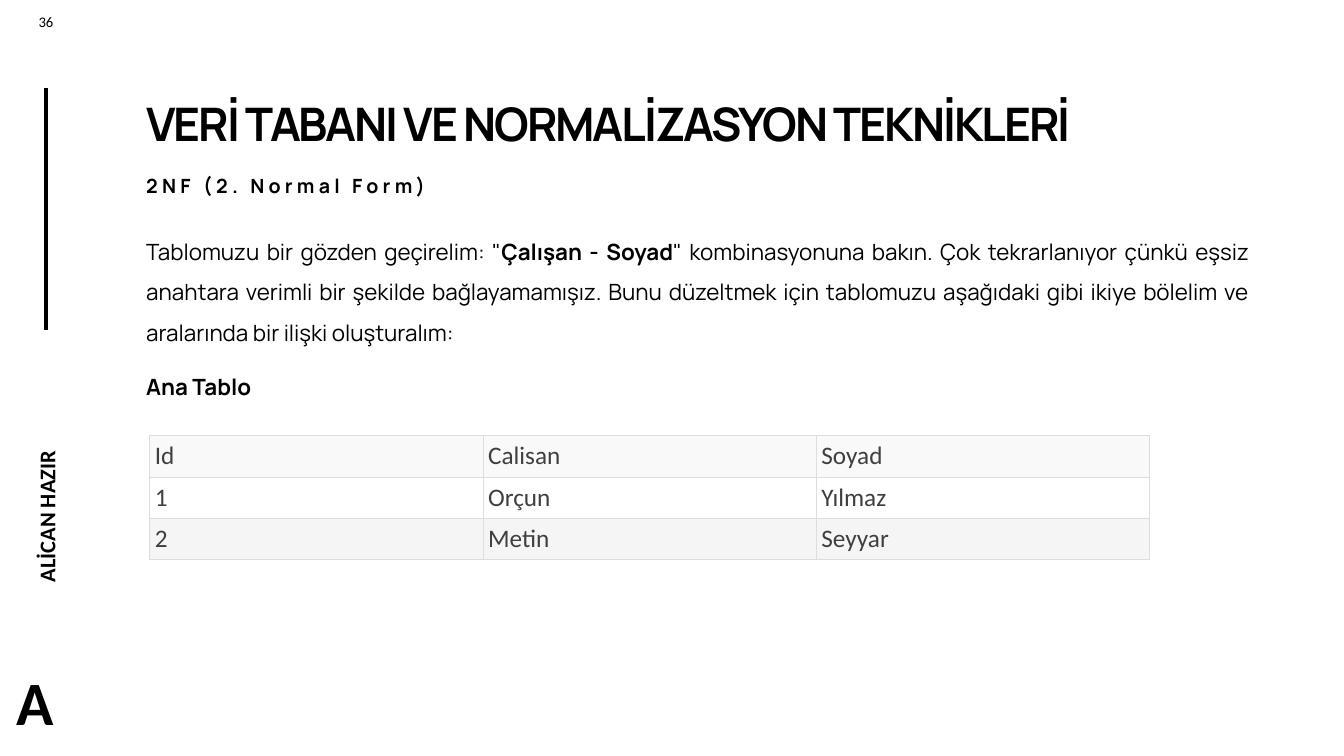
from dataclasses import dataclass
from pptx import Presentation
from pptx.dml.color import RGBColor as RGB
from pptx.enum.shapes import MSO_CONNECTOR as Link
from pptx.enum.text import MSO_ANCHOR as Anchor, MSO_AUTO_SIZE as Fit, PP_ALIGN as Align
from pptx.oxml.ns import qn
from pptx.util import Inches, Pt
from lxml.etree import SubElement as Sub


@dataclass(frozen=True)
class Theme:
    head: str = "Manrope"
    side: str = "Calibri"
    ink: str = "000000"
    cell: str = "3F3F3F"
    grid: str = "DDDDDD"
    rows: tuple = ("F9F9F9", "FFFFFF", "F5F5F5")
    title: float = 33
    sub: float = 14
    body: float = 16
    table: float = 18
    page: float = 10.5
    name: float = 16
    mark: float = 44


T = Theme()
WIDE, HIGH = Inches(13.33), Inches(7.5)
LEFT = 10.88  # text margin, percent of the width
ROWS = [("Id", "Calisan", "Soyad"),
        ("1", "Orçun", "Yılmaz"),
        ("2", "Metin", "Seyyar")]
BODY = [
    [("Tablomuzu bir gözden geçirelim: \"", False),
     ("Çalışan - Soyad", True),
     ("\" kombinasyonuna bakın. Çok tekrarlanıyor çünkü eşsiz anahtara verimli "
      "bir şekilde bağlayamamışız. Bunu düzeltmek için tablomuzu aşağıdaki "
      "gibi ikiye bölelim ve aralarında bir ilişki oluşturalım:", False)],
    [("Ana Tablo", True)],
]


# Lengths are percentages of the slide's size
def area(x, y, w, h):
    return [int(WIDE * x / 100), int(HIGH * y / 100),
            int(WIDE * w / 100), int(HIGH * h / 100)]


def style(para, face, size, color=T.ink, bold=None):
    font = para.font
    font.name, font.size, font.bold = face, Pt(size), bold
    font.color.rgb = RGB.from_string(color)


def inset(frame, left, top, right, bottom):
    frame.margin_left, frame.margin_top = Inches(left), Inches(top)
    frame.margin_right, frame.margin_bottom = Inches(right), Inches(bottom)


def track(para, points):
    for run in para.runs:
        run.font._element.set("spc", str(int(points * 100)))


def box(slide, place):
    frame = slide.shapes.add_textbox(*area(*place)).text_frame
    frame.word_wrap = True
    inset(frame, 0, 0.05, 0.1, 0.05)
    return frame


# Margin words that size themselves to their text
def label(slide, text, place, size, turn=0):
    shape = slide.shapes.add_textbox(*area(*place))
    shape.rotation = turn
    frame = shape.text_frame
    frame.word_wrap, frame.auto_size = False, Fit.SHAPE_TO_FIT_TEXT
    frame.vertical_anchor = Anchor.MIDDLE
    inset(frame, 0.02, 0.02, 0.02, 0.02)
    frame.text = text
    style(frame.paragraphs[0], T.side, size, bold=True)


def page(slide, text, place):
    frame = slide.shapes.add_textbox(*area(*place)).text_frame
    frame.word_wrap = True
    frame.text = text
    para = frame.paragraphs[0]
    para.alignment = Align.CENTER
    style(para, T.side, T.page)


def rule(slide, x, top, end):
    left, high, _, low = area(x, top, 0, end)
    line = slide.shapes.add_connector(Link.STRAIGHT, left, low, left, high)
    line.line.width = Pt(3)
    line.line.color.rgb = RGB.from_string(T.ink)
    Sub(line._element.spPr, qn("a:effectLst"))


def title(slide, text, place):
    shape = slide.shapes.title
    shape.left, shape.top, shape.width, shape.height = area(*place)
    frame = shape.text_frame
    frame.text = text
    frame.word_wrap, frame.auto_size = True, Fit.NONE
    frame.vertical_anchor = Anchor.BOTTOM
    inset(frame, 0, 0.05, 0.1, 0.05)
    para = frame.paragraphs[0]
    para.alignment, para.line_spacing = Align.LEFT, 0.9
    style(para, T.head, T.title, bold=True)
    track(para, -1.5)


def lead(slide, text, place):
    frame = box(slide, place)
    frame.text = text
    para = frame.paragraphs[0]
    para.line_spacing, para.space_before = 0.9, Pt(10)
    style(para, T.head, T.sub, bold=True)
    track(para, 3)


def prose(slide, parts, place):
    frame = box(slide, place)
    for i, runs in enumerate(parts):
        para = frame.add_paragraph() if i else frame.paragraphs[0]
        para.alignment = Align.JUSTIFY
        para.line_spacing, para.space_before = 1.5, Pt(10)
        style(para, T.head, T.body)
        for text, bold in runs:
            run = para.add_run()
            run.text, run.font.bold = text, bold


def edge(cell):
    props = cell._tc.get_or_add_tcPr()
    for i, side in enumerate(("lnL", "lnR", "lnT", "lnB")):
        line = props.makeelement(qn("a:" + side), {"w": str(Pt(0.75))})
        fill = Sub(line, qn("a:solidFill"))
        Sub(fill, qn("a:srgbClr"), val=T.grid)
        props.insert(i, line)


def table(slide, rows, place):
    grid = slide.shapes.add_table(len(rows), len(rows[0]), *area(*place)).table
    grid.first_row = grid.horz_banding = False
    for r, row in enumerate(rows):
        for c, text in enumerate(row):
            cell = grid.cell(r, c)
            cell.text = text
            inset(cell, 0.05, 0.05, 0.05, 0.05)
            cell.fill.solid()
            cell.fill.fore_color.rgb = RGB.from_string(T.rows[r])
            edge(cell)
            style(cell.text_frame.paragraphs[0], T.side, T.table, T.cell)


def main():
    deck = Presentation()
    deck.slide_width, deck.slide_height = WIDE, HIGH
    slide = deck.slides.add_slide(deck.slide_layouts[5])

    # Side margin
    label(slide, "ALİCAN HAZIR", (-3.15, 63.47, 13.2, 4.13), T.name, 270)
    rule(slide, 3.45, 11.6, 43.6)
    page(slide, "36", (1.28, 1.07, 4.28, 3.6))
    label(slide, "A", (1.05, 87.47, 3.9, 10.4), T.mark)

    # Content
    title(slide, "VERİ TABANI VE NORMALİZASYON TEKNİKLERİ", (LEFT, 12.27, 81.62, 8.4))
    lead(slide, "2NF (2. Normal Form)", (LEFT, 22.67, 69.84, 4.13))
    prose(slide, BODY, (LEFT, 29.07, 82.82, 26.8))
    table(slide, ROWS, (11.15, 57.65, 74.4, 16.4))

    deck.save("out.pptx")


if __name__ == "__main__":
    main()
